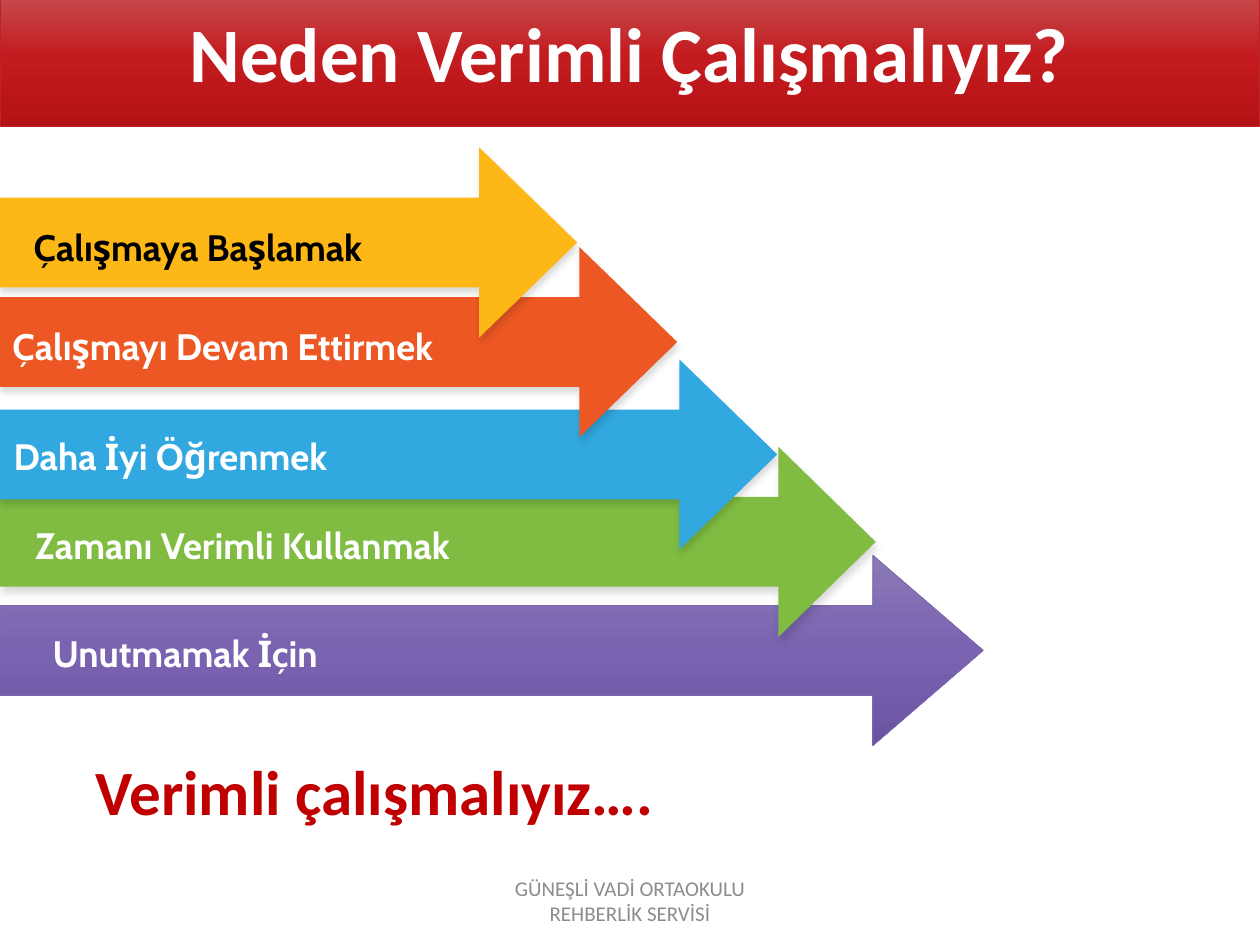
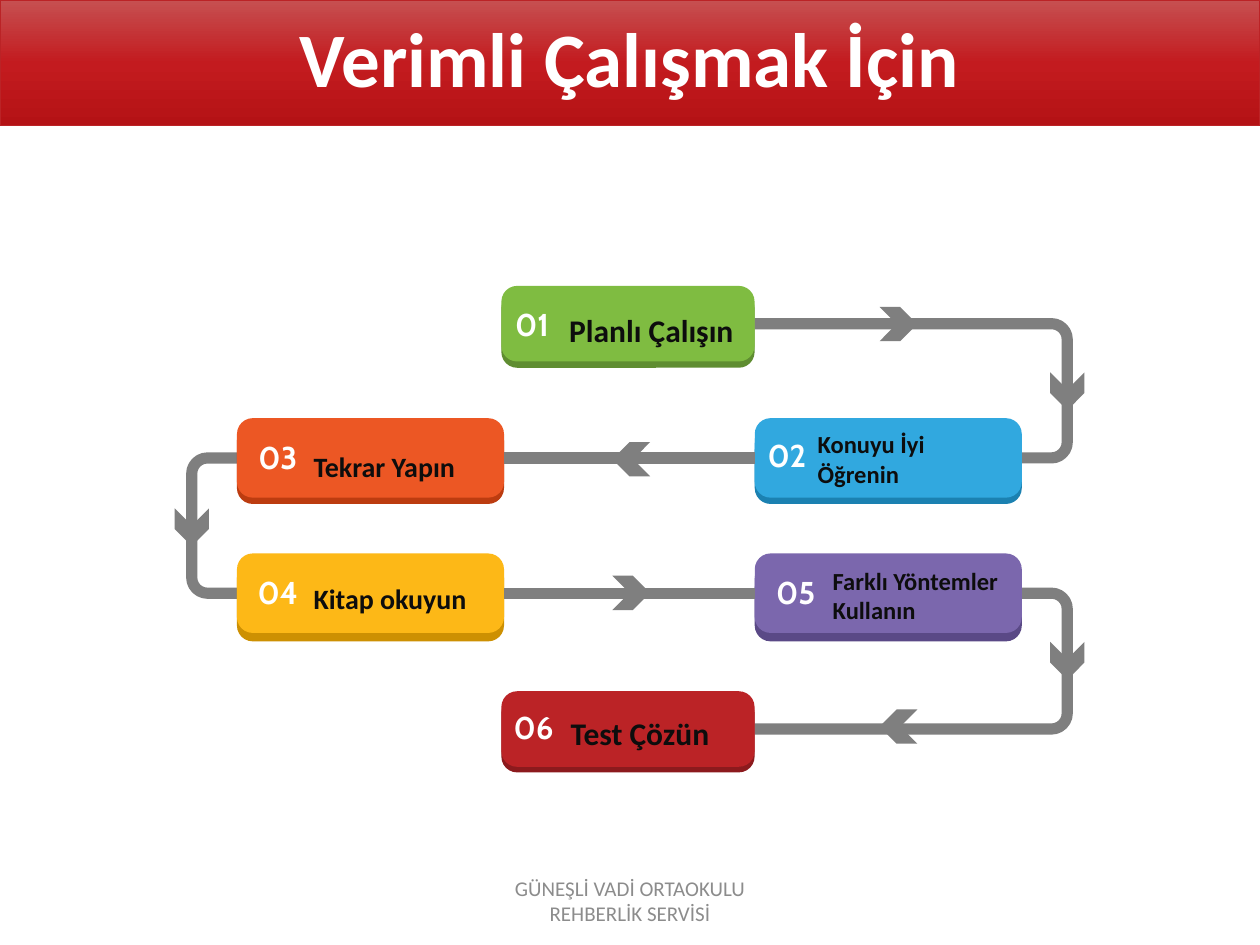
from copy import deepcopy
from math import cos, radians, sin

from lxml.etree import SubElement
from pptx import Presentation
from pptx.dml.color import RGBColor
from pptx.enum.shapes import MSO_CONNECTOR as Connector, MSO_SHAPE as Shape
from pptx.enum.text import MSO_ANCHOR as Anchor, PP_ALIGN as Align
from pptx.oxml.ns import qn
from pptx.util import Pt

WHITE = RGBColor(0xFF, 0xFF, 0xFF)
BLACK = RGBColor(0x00, 0x00, 0x00)
INK = RGBColor(0x0D, 0x0D, 0x0D)
GREY = RGBColor(0x7F, 0x7F, 0x7F)
FOOTER_GREY = RGBColor(0x8C, 0x8C, 0x8C)
DARK_RED = RGBColor(0xC0, 0x00, 0x00)
RED = RGBColor(0xBB, 0x23, 0x26)
RED_EDGE = RGBColor(0x8C, 0x1A, 0x1D)
YELLOW = RGBColor(0xFD, 0xB8, 0x17)
YELLOW_EDGE = RGBColor(0xCD, 0x90, 0x02)
ORANGE = RGBColor(0xEC, 0x57, 0x24)
ORANGE_EDGE = RGBColor(0xBC, 0x3C, 0x10)
BLUE = RGBColor(0x31, 0xA8, 0xDF)
BLUE_EDGE = RGBColor(0x1B, 0x81, 0xB1)
GREEN = RGBColor(0x7F, 0xBC, 0x41)
GREEN_EDGE = RGBColor(0x5F, 0x8D, 0x31)
PURPLE = RGBColor(0x7B, 0x67, 0xAD)
PURPLE_EDGE = RGBColor(0x5A, 0x49, 0x86)
RED_GRADIENT = [RGBColor(0xC6, 0x50, 0x51), RGBColor(0xC3, 0x1B, 0x1F), RGBColor(0xB4, 0x12, 0x15)]
PURPLE_GRADIENT = [RGBColor(0x8A, 0x7A, 0xB6), RGBColor(0x7A, 0x63, 0xB1), RGBColor(0x6A, 0x54, 0xA1)]

BODY_FONT, ACCENT_FONT = "Calibri", "Cabin"
SLIDE_WIDTH, SLIDE_HEIGHT = 720, 540
BAND_BOTTOM = 72
FOOTER = "GÜNEŞLİ VADİ ORTAOKULU\nREHBERLİK SERVİSİ"

WHY_TITLE = "Neden Verimli Çalışmalıyız?"
CONCLUSION = "Verimli çalışmalıyız…."
# text, text colour, arrow colour, tip, head length, top, text left, text top
REASONS = [
    ("Çalışmaya Başlamak", BLACK, YELLOW, 329.8, 56, 84.2, 12.2, 124.6),
    ("Çalışmayı Devam Ettirmek", WHITE, ORANGE, 387, 56, 141.1, 0, 181.4),
    ("Daha İyi Öğrenmek", WHITE, BLUE, 444.2, 56, 205.3, 0.7, 244.1),
    ("Zamanı Verimli Kullanmak", WHITE, GREEN, 500.4, 55.6, 255.3, 13, 295.2),
    ("Unutmamak İçin", WHITE, None, 561.8, 63, 317.3, 23, 357.1),
]
ARROW_HEIGHT, ARROW_SHOULDER = 108.7, 28.7

HOW_TITLE = "Verimli Çalışmak İçin"
SMALL_CARD, LARGE_CARD = (144.7, 43.2), (152.6, 45.4)
MIDDLE_LEFT, LEFT, RIGHT = 286.5, 135.4, 431.3
STEPS = [
    ("Planlı Çalışın", 18, MIDDLE_LEFT, 163.4, SMALL_CARD, 3.6, GREEN, GREEN_EDGE, (285, 170.6), (318.2, 174.2)),
    ("Konuyu İyi Öğrenin", 14, RIGHT, 239, LARGE_CARD, 3.6, BLUE, BLUE_EDGE, (430.6, 245.5), (460.1, 241.9)),
    ("Tekrar Yapın", 16, LEFT, 239, LARGE_CARD, 3.6, ORANGE, ORANGE_EDGE, (139.7, 247), (172.1, 253.4)),
    ("Kitap okuyun", 16, LEFT, 316.3, LARGE_CARD, 4.8, YELLOW, YELLOW_EDGE, (139.7, 324), (172.1, 329)),
    ("Farklı Yöntemler Kullanın", 14, RIGHT, 316.3, LARGE_CARD, 4.8, PURPLE, PURPLE_EDGE, (435.6, 324), (468.7, 319.7)),
    ("Test Çözün", 18, MIDDLE_LEFT, 395, SMALL_CARD, 3.2, RED, RED_EDGE, (285.8, 401), (319, 404.6)),
]
CORNER = 9
LEFT_RAIL, RIGHT_RAIL = 109.6, 609.9
TURNS = [(0, 1, RIGHT_RAIL, 1), (2, 3, LEFT_RAIL, -1), (4, 5, RIGHT_RAIL, 1)]
STRAIGHTS = [(1, 1, 2, 3), (3, 3, 4, 1)]
CHEVRON_WIDTH, CHEVRON_HEIGHT = 21.6, 19.6
CHEVRONS = [
    (513.4, 185.2, 0), (RIGHT_RAIL, 223.6, 90), (360.7, 262.4, 180), (LEFT_RAIL, 301.3, 90),
    (RIGHT_RAIL, 377.6, 90), (360.7, 338.8, 0), (513.4, 415.2, 180),
]


def write(shape, text, size, color, font=BODY_FONT, bold=True, align=Align.LEFT, anchor=Anchor.TOP):
    frame = shape.text_frame
    frame.word_wrap = True
    frame.vertical_anchor = anchor
    frame.text = text
    for paragraph in frame.paragraphs:
        paragraph.alignment = align
        for run in paragraph.runs:
            run.font.size = Pt(size)
            run.font.name = font
            run.font.bold = bold
            run.font.color.rgb = color


def add_text(slide, left, top, width, height, *content, **style):
    box = slide.shapes.add_textbox(Pt(left), Pt(top), Pt(width), Pt(height))
    write(box, *content, **style)


def paint(shape, color):
    shape.shadow.inherit = False
    shape.fill.solid()
    shape.fill.fore_color.rgb = color
    shape.line.fill.background()


def paint_gradient(shape, colors, line_color):
    shape.shadow.inherit = False
    shape.fill.gradient()
    shape.fill.gradient_angle = 270
    stop_list = shape._element.spPr.find(".//" + qn("a:gsLst"))
    stop_list.insert(1, deepcopy(stop_list[0]))
    for index, (stop, color) in enumerate(zip(shape.fill.gradient_stops, colors)):
        stop.position = index / 2
        stop.color.rgb = color
    shape.line.color.rgb = line_color
    shape.line.width = Pt(0.5)


def add_soft_shadow(shape):
    effects = shape._element.spPr.find(qn("a:effectLst"))
    shadow = SubElement(effects, qn("a:outerShdw"), blurRad=str(Pt(4)), dist=str(Pt(3)),
                        dir="5400000", algn="t", rotWithShape="0")
    color = SubElement(shadow, qn("a:srgbClr"), val=str(BLACK))
    SubElement(color, qn("a:alpha"), val="15000")


def add_outline(slide, points, close):
    (start_x, start_y), *rest = [(Pt(x), Pt(y)) for x, y in points]
    builder = slide.shapes.build_freeform(start_x, start_y)
    builder.add_line_segments(rest, close=close)
    return builder.convert_to_shape()


def add_base(presentation, title, band_top):
    slide = presentation.slides.add_slide(presentation.slide_layouts[6])
    band = slide.shapes.add_shape(Shape.RECTANGLE, 0, Pt(band_top), Pt(SLIDE_WIDTH), Pt(BAND_BOTTOM - band_top))
    paint_gradient(band, RED_GRADIENT, RED)
    write(band, title, 44, WHITE, align=Align.CENTER, anchor=Anchor.MIDDLE)
    band.text_frame.paragraphs[0].line_spacing = 0.9
    add_text(slide, 238.5, 500.2, 243, 28.8, FOOTER, 12, FOOTER_GREY,
             bold=False, align=Align.CENTER, anchor=Anchor.MIDDLE)
    return slide


def add_reason_arrow(slide, color, tip, head, top):
    neck, bottom = tip - head, top + ARROW_HEIGHT
    upper, lower = top + ARROW_SHOULDER, bottom - ARROW_SHOULDER
    arrow = add_outline(slide, [(tip, (top + bottom) / 2), (neck, top), (neck, upper), (0, upper),
                                (0, lower), (neck, lower), (neck, bottom)], True)
    if color is None:
        paint_gradient(arrow, PURPLE_GRADIENT, PURPLE)
    else:
        paint(arrow, color)
        add_soft_shadow(arrow)


def build_why(presentation):
    slide = add_base(presentation, WHY_TITLE, -6.5)
    for _, _, color, tip, head, top, _, _ in reversed(REASONS):
        add_reason_arrow(slide, color, tip, head, top)
    for text, text_color, _, _, _, _, left, top in REASONS:
        add_text(slide, left, top, 400, 32.4, text, 21, text_color, font=ACCENT_FONT)
    add_text(slide, 47.5, 426.2, 462, 51, CONCLUSION, 36, DARK_RED)


def style_track(line):
    line.color.rgb = GREY
    line.width = Pt(6.38)


def card_middle(step):
    _, _, left, top, (width, height), *_ = step
    return left, left + width, top + height / 2


def add_turn(slide, first, second, rail, side):
    first_left, first_right, first_y = card_middle(STEPS[first])
    second_left, second_right, second_y = card_middle(STEPS[second])
    start, end = (first_right, second_right) if side > 0 else (first_left, second_left)
    center_x = rail - side * CORNER
    points = [(start, first_y)]
    for center_y, begin in [(first_y + CORNER, -90), (second_y - CORNER, 0)]:
        for degrees in range(begin, begin + 91, 15):
            angle = radians(degrees)
            points.append((center_x + side * CORNER * cos(angle), center_y + CORNER * sin(angle)))
    points.append((end, second_y))
    track = add_outline(slide, points, False)
    track.shadow.inherit = False
    track.fill.background()
    style_track(track.line)


def add_card(slide, left, top, dimensions, color):
    width, height = dimensions
    card = slide.shapes.add_shape(Shape.ROUNDED_RECTANGLE, Pt(left), Pt(top), Pt(width), Pt(height))
    card.adjustments[0] = CORNER / height
    paint(card, color)
    return card


def build_how(presentation):
    slide = add_base(presentation, HOW_TITLE, 0)
    for turn in TURNS:
        add_turn(slide, *turn)
    cards = []
    for number, step in enumerate(STEPS, 1):
        label, size, left, top, dimensions, depth, face, edge, number_place, label_place = step
        add_card(slide, left, top + depth, dimensions, edge)
        cards.append(add_card(slide, left, top, dimensions, face))
        add_text(slide, *number_place, 38.2, 28.8, f"{number:02}", 18, WHITE, font=ACCENT_FONT, align=Align.CENTER)
        label_width = 123 if number == 2 else 109
        add_text(slide, *label_place, label_width, 28.8, label, size, INK)
    for begin, begin_side, end, end_side in STRAIGHTS:
        connector = slide.shapes.add_connector(Connector.STRAIGHT, 0, 0, 0, 0)
        connector.begin_connect(cards[begin], begin_side)
        connector.end_connect(cards[end], end_side)
        style_track(connector.line)
        SubElement(connector._element.spPr, qn("a:effectLst"))
    for center_x, center_y, rotation in CHEVRONS:
        chevron = slide.shapes.add_shape(
            Shape.CHEVRON, Pt(center_x - CHEVRON_WIDTH / 2), Pt(center_y - CHEVRON_HEIGHT / 2),
            Pt(CHEVRON_WIDTH), Pt(CHEVRON_HEIGHT))
        chevron.rotation = rotation
        paint(chevron, GREY)


def main():
    presentation = Presentation()
    presentation.slide_width, presentation.slide_height = Pt(SLIDE_WIDTH), Pt(SLIDE_HEIGHT)
    build_why(presentation)
    build_how(presentation)
    presentation.save("out.pptx")


if __name__ == "__main__":
    main()
